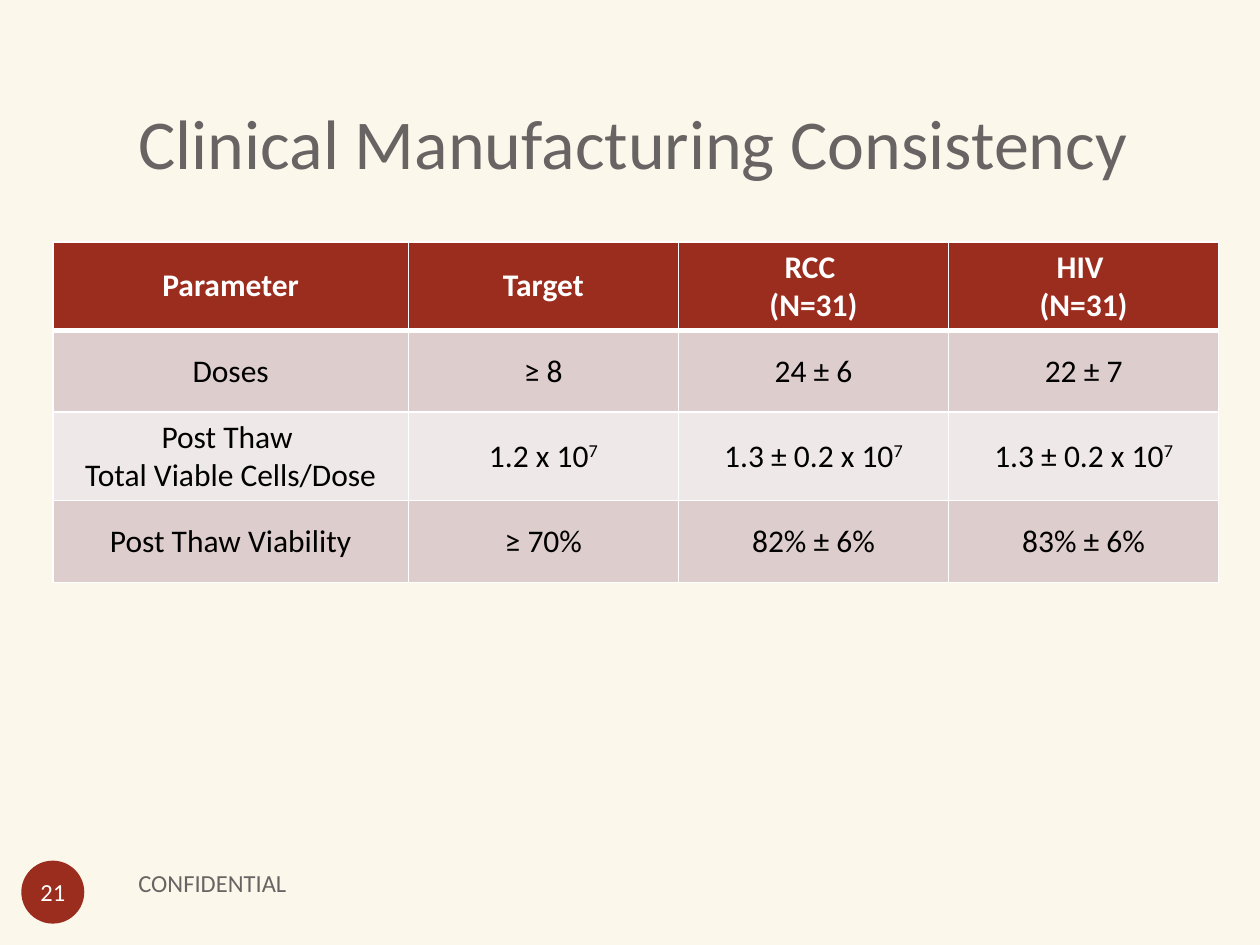
from lxml import etree
from pptx import Presentation, util as u
from pptx.dml.color import RGBColor
from pptx.enum import shapes, text
from pptx.oxml.ns import qn

RED, GREY, WHITE, BLACK = "9B2D1F", "696464", "FFFFFF", "000000"
BANDS = ["DECDCD", "EFE8E8"]
ROWS = [
    ["Parameter", "Target", "RCC \n(N=31)", "HIV \n(N=31)"],
    ["Doses", "≥ 8", "24 ± 6", "22 ± 7"],
    ["Post Thaw \nTotal Viable Cells/Dose", "1.2 x 10^7", "1.3 ± 0.2 x 10^7", "1.3 ± 0.2 x 10^7"],
    ["Post Thaw Viability", "≥ 70%", "82% ± 6%", "83% ± 6%"],
]


def paint(color_format, color):
    color_format.rgb = RGBColor.from_string(color)


def fill(target, color):
    target.fill.solid()
    paint(target.fill.fore_color, color)


def write(tf, content, size, color, align=text.PP_ALIGN.LEFT, bold=False):
    for i, line in enumerate(content.split("\n")):
        p = tf.paragraphs[0] if i == 0 else tf.add_paragraph()
        p.alignment = align
        p.font.name, p.font.size, p.font.bold = "Calibri", u.Pt(size), bold
        paint(p.font.color, color)
        base, _, power = line.partition("^")
        p.add_run().text = base
        if power:
            r = p.add_run()
            r.text = power
            r._r.get_or_add_rPr().set("baseline", "30000")


def set_borders(cell, widths):
    tcPr = cell._tc.get_or_add_tcPr()
    for side, width in zip("LRTB", widths):
        ln = etree.SubElement(tcPr, qn(f"a:ln{side}"), w=str(u.Pt(width)))
        solid = etree.SubElement(ln, qn("a:solidFill"))
        etree.SubElement(solid, qn("a:srgbClr"), val=WHITE)


def add_title(s, x, y, w, h):
    sp = s.shapes.title
    sp.left, sp.top, sp.width, sp.height = x, y, w, h
    tf = sp.text_frame
    tf.auto_size = text.MSO_AUTO_SIZE.NONE
    tf.vertical_anchor = text.MSO_ANCHOR.BOTTOM
    tf.margin_bottom = u.Cm(0.25)
    write(tf, "Clinical Manufacturing Consistency", 40, GREY)


def add_results(s, x, y, w, h):
    table = s.shapes.add_table(len(ROWS), len(ROWS[0]), x, y, w, h).table
    first = u.Cm(7.16)
    for j, col in enumerate(table.columns):
        col.width = first if j == 0 else (w - first) // 3
    for i, values in enumerate(ROWS):
        header = i == 0
        for j, value in enumerate(values):
            cell = table.cell(i, j)
            set_borders(cell, [1, 1, 3 if i == 1 else 1, 3 if header else 1])
            fill(cell, RED if header else BANDS[(i - 1) % 2])
            cell.vertical_anchor = text.MSO_ANCHOR.MIDDLE
            write(cell.text_frame, value, 18, WHITE if header else BLACK,
                  text.PP_ALIGN.CENTER, header)


def add_footer(s, x, y, w, h):
    size = u.Cm(1.27)
    sp = s.shapes.add_textbox(x + u.Cm(2.11), y, w - u.Cm(2.11), size)
    tf = sp.text_frame
    tf.word_wrap = True
    tf.vertical_anchor = text.MSO_ANCHOR.MIDDLE
    write(tf, "CONFIDENTIAL", 14, GREY)

    sp = s.shapes.add_shape(shapes.MSO_SHAPE.OVAL, x, y + h - size, size, size)
    sp.shadow.inherit = False
    fill(sp, RED)
    sp.line.fill.background()
    tf = sp.text_frame
    tf.word_wrap = False
    tf.vertical_anchor = text.MSO_ANCHOR.MIDDLE
    tf.margin_left = tf.margin_right = tf.margin_top = tf.margin_bottom = 0
    write(tf, "21", 14, WHITE, text.PP_ALIGN.CENTER)


def main():
    prs = Presentation()
    prs.slide_width, prs.slide_height = u.Cm(25.4), u.Cm(19.05)
    s = prs.slides.add_slide(prs.slide_layouts[5])
    fill(s.background, "FBF8EB")
    add_title(s, u.Cm(2.54), u.Cm(0.76), u.Cm(21.59), u.Cm(3.18))
    add_footer(s, u.Cm(0.43), u.Cm(17.15), u.Cm(13.11), u.Cm(1.47))
    add_results(s, u.Cm(1.07), u.Cm(4.88), u.Cm(23.5), u.Cm(6.6))
    prs.save("out.pptx")


if __name__ == "__main__":
    main()
